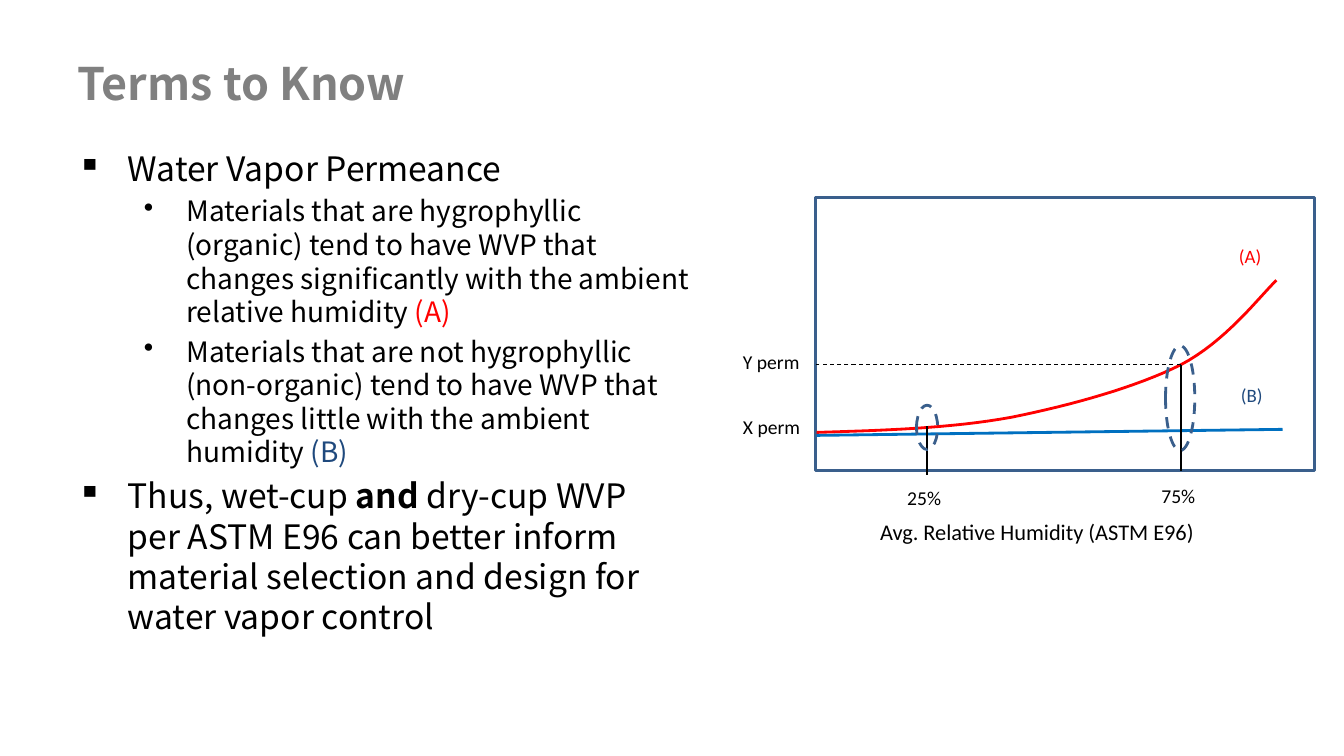
import pptx
import pptx.util
import pptx.dml.color
import pptx.enum.dml
import pptx.enum.shapes
import pptx.enum.text
import pptx.oxml
import pptx.oxml.ns
from pptx.util import Inches, Pt

SANS, LABEL = "Noto Sans CJK JP", "Calibri"
BLACK, GRAY, RED, NAVY = "000000", "808080", "FF0000", "1F497D"
FRAME, BLUE = "3A5F8C", "0070C0"


def color(hex_text):
    return pptx.dml.color.RGBColor.from_string(hex_text)


def curve_points(start, segments, steps=16):
    """Sample a chain of cubic curves, each given as two handles and an end."""
    points = [start]
    for first, second, end in segments:
        for step in range(1, steps + 1):
            t = step / steps
            weights = ((1 - t) ** 3, 3 * t * (1 - t) ** 2, 3 * t * t * (1 - t), t ** 3)
            corners = (start, first, second, end)
            points.append(tuple(sum(w * corner[axis] for w, corner in zip(weights, corners))
                                for axis in (0, 1)))
        start = end
    return points


class SlideBuilder:
    def __init__(self, deck):
        self.slide = deck.slides.add_slide(deck.slide_layouts[5])
        self.shapes = self.slide.shapes

    def add_span(self, para, text, rgb, **style):
        span = para.add_run()
        span.text = text
        for name, value in style.items():
            setattr(span.font, name, value)
        span.font.color.rgb = color(rgb)

    def outline(self, shape, rgb, width, dashed=False):
        shape.line.color.rgb = color(rgb)
        shape.line.width = Pt(width)
        if dashed:
            shape.line.dash_style = pptx.enum.dml.MSO_LINE.DASH

    def title(self, text, area):
        box = self.shapes.title
        for name, value in zip(("left", "top", "width", "height"), area):
            setattr(box, name, Inches(value))
        box.text_frame.vertical_anchor = pptx.enum.text.MSO_ANCHOR.MIDDLE
        para = box.text_frame.paragraphs[0]
        para.alignment = pptx.enum.text.PP_ALIGN.LEFT
        self.add_span(para, text, GRAY, name=SANS, size=Pt(32), bold=True)

    def bullets(self, items, area):
        frame = self.shapes.add_textbox(*map(Inches, area)).text_frame
        frame.word_wrap = True
        levels = ({"mark": "▪", "size": 24, "left": 0.5, "hang": 0.5},
                  {"mark": "•", "size": 20, "left": 1.08, "hang": 0.42})
        for index, (level, spans) in enumerate(items):
            look = levels[level]
            para = frame.add_paragraph() if index else frame.paragraphs[0]
            props = para._p.get_or_add_pPr()
            props.set("marL", str(Inches(look["left"])))
            props.set("indent", str(-Inches(look["hang"])))
            mark = pptx.oxml.parse_xml(
                f'<a:buChar {pptx.oxml.ns.nsdecls("a")} char="{look["mark"]}"/>')
            props.append(mark)
            para.level = level
            para.line_spacing = Pt(look["size"] * 1.2)
            para.space_before = Pt(look["size"] * 0.2 if index else 0)
            for text, rgb, bold in spans:
                for number, line in enumerate(text.split("\n")):
                    if number:
                        para.add_line_break()
                    self.add_span(para, line, rgb, name=SANS, size=Pt(look["size"]), bold=bold)

    def label(self, text, area, size=14, rgb=BLACK):
        frame = self.shapes.add_textbox(*map(Inches, area)).text_frame
        frame.word_wrap = False
        self.add_span(frame.paragraphs[0], text, rgb, name=LABEL, size=Pt(size))

    def hollow(self, kind, area, dashed=False):
        shape = self.shapes.add_shape(kind, *map(Inches, area))
        shape.shadow.inherit = False
        shape.fill.background()
        self.outline(shape, FRAME, 2, dashed)

    def trace(self, points, rgb):
        spots = [(Inches(x), Inches(y)) for x, y in points]
        builder = self.shapes.build_freeform(*spots[0], scale=1.0)
        builder.add_line_segments(spots[1:], close=False)
        shape = builder.convert_to_shape()
        shape.shadow.inherit = False
        shape.fill.background()
        self.outline(shape, rgb, 2)

    def line(self, start, end, width, dashed=False):
        link = self.shapes.add_connector(pptx.enum.shapes.MSO_CONNECTOR.STRAIGHT,
                                         *map(Inches, start + end))
        self.outline(link, BLACK, width, dashed)
        link._element.spPr.append(
            pptx.oxml.parse_xml(f'<a:effectLst {pptx.oxml.ns.nsdecls("a")}/>'))


def main():
    deck = pptx.Presentation()
    deck.slide_width, deck.slide_height = Inches(13.33), Inches(7.5)
    page = SlideBuilder(deck)
    kinds = pptx.enum.shapes.MSO_SHAPE

    # Title and bullets
    page.title("Terms to Know", (0.67, 0.22, 12, 1.19))
    page.bullets([
        (0, [("Water Vapor Permeance", BLACK, False)]),
        (1, [("Materials that are hygrophyllic (organic) tend to have WVP that changes "
              "significantly with the ambient relative humidity ", BLACK, False),
             ("(A)", RED, False)]),
        (1, [("Materials that are not hygrophyllic (non-organic) tend to have WVP that "
              "changes little with the ambient humidity ", BLACK, False),
             ("(B)", NAVY, False)]),
        (0, [("Thus, wet-cup ", BLACK, False), ("and", BLACK, True),
             (" dry-cup WVP \nper ASTM E96 can better inform material selection and "
              "design for water vapor control", BLACK, False)]),
    ], (0.67, 1.42, 6.3, 4.56))

    # Plot frame and the two permeance curves
    page.hollow(kinds.RECTANGLE, (8.09, 1.96, 4.95, 2.71))
    page.trace(curve_points((8.1, 4.29), [
        ((8.76, 4.27), (9.43, 4.25), (10.03, 4.14)),
        ((10.63, 4.02), (11.27, 3.84), (11.71, 3.62)),
        ((12.15, 3.39), (12.47, 2.97), (12.66, 2.78)),
    ]), RED)
    page.trace([(8.1, 4.32), (12.72, 4.26)], BLUE)

    # Humidity markers
    page.line((9.19, 4.23), (9.19, 4.71), 1.5)
    page.line((11.71, 3.62), (11.71, 4.67), 1.5)
    page.hollow(kinds.OVAL, (9.09, 4.02, 0.21, 0.44), dashed=True)
    page.hollow(kinds.OVAL, (11.56, 3.43, 0.29, 1.04), dashed=True)
    page.line((11.71, 3.62), (8.09, 3.62), 0.75, dashed=True)

    # Axis and curve labels
    page.label("Avg. Relative Humidity (ASTM E96)", (8.63, 5.09, 3.55, 0.43), 16)
    page.label("X perm", (7.27, 4.07, 0.82, 0.39))
    page.label("Y perm", (7.27, 3.42, 0.81, 0.39))
    page.label("25%", (8.9, 4.77, 0.57, 0.39))
    page.label("75%", (11.42, 4.75, 0.57, 0.39))
    page.label("(A)", (12.19, 2.38, 0.53, 0.47), 13.5, RED)
    page.label("(B)", (12.21, 3.76, 0.52, 0.47), 13.5, NAVY)

    deck.save("out.pptx")


if __name__ == "__main__":
    main()
